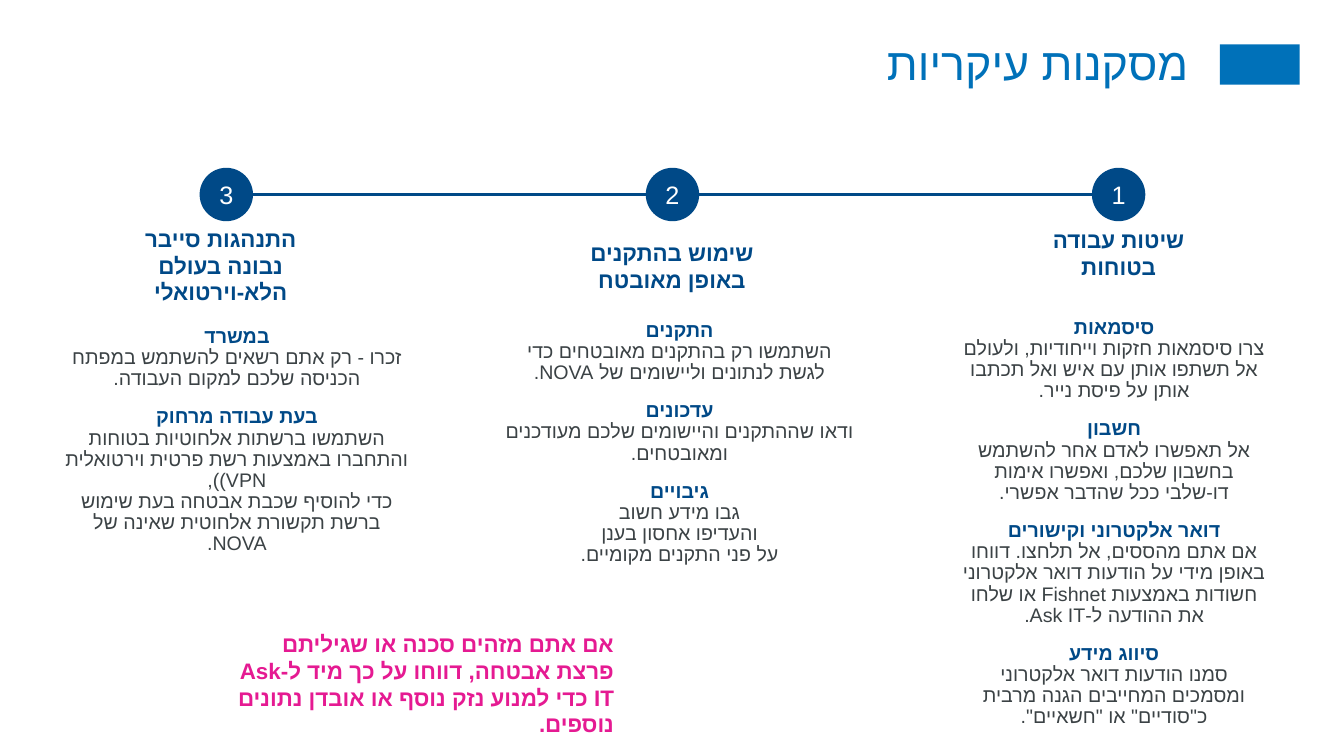
import pptx
import pptx.dml.color
import pptx.enum.shapes
import pptx.enum.text
import pptx.oxml.ns
import pptx.util
from lxml import etree

Inches, Pt = pptx.util.Inches, pptx.util.Pt
qn = pptx.oxml.ns.qn
Kind = pptx.enum.shapes.MSO_SHAPE
Align = pptx.enum.text.PP_ALIGN
Anchor = pptx.enum.text.MSO_ANCHOR

NAVY, BLUE, PINK, GREY, WHITE = "004987", "0071B9", "E51A92", "3B4245", "FFFFFF"
FONT = "Arial"

TITLE = "מסקנות עיקריות"
NOTE = ("אם אתם מזהים סכנה או שגיליתם פרצת אבטחה, דווחו על כך מיד ל-Ask IT "
        "כדי למנוע נזק נוסף או אובדן נתונים נוספים.")

# Steps from left to right: number, heading, heading box, tips, tips box
STEPS = [
    ("3", "התנהגות סייבר נבונה בעולם הלא-וירטואלי", (1.11, 2.31, 2.16, 0.64), [
        ("במשרד", "זכרו - רק אתם רשאים להשתמש במפתח הכניסה שלכם למקום העבודה."),
        ("בעת עבודה מרחוק",
         "השתמשו ברשתות אלחוטיות בטוחות והתחברו באמצעות רשת פרטית וירטואלית VPN)),\n"
         "כדי להוסיף שכבת אבטחה בעת שימוש ברשת תקשורת אלחוטית שאינה של NOVA."),
    ], (0.52, 3.19, 3.66, 2.35)),
    ("2", "שימוש בהתקנים באופן מאובטח", (5.53, 2.32, 2.27, 0.64), [
        ("התקנים", "השתמשו רק בהתקנים מאובטחים כדי לגשת לנתונים וליישומים של NOVA."),
        ("עדכונים", "ודאו שההתקנים והיישומים שלכם מעודכנים ומאובטחים."),
        ("גיבויים", "גבו מידע חשוב\nוהעדיפו אחסון בענן\nעל פני התקנים מקומיים."),
    ], (4.91, 3.13, 3.66, 2.56)),
    ("1", "שיטות עבודה בטוחות", (10.02, 2.19, 2.15, 0.64), [
        ("סיסמאות", "צרו סיסמאות חזקות וייחודיות, ולעולם אל תשתפו אותן עם איש "
                    "ואל תכתבו אותן על פיסת נייר."),
        ("חשבון", "אל תאפשרו לאדם אחר להשתמש בחשבון שלכם, ואפשרו אימות דו-שלבי "
                  "ככל שהדבר אפשרי."),
        ("דואר אלקטרוני וקישורים",
         "אם אתם מהססים, אל תלחצו. דווחו באופן מידי על הודעות דואר אלקטרוני "
         "חשודות באמצעות Fishnet או שלחו את ההודעה ל-Ask IT."),
        ("סיווג מידע", "סמנו הודעות דואר אלקטרוני ומסמכים המחייבים הגנה מרבית "
                       "כ\"סודיים\" או \"חשאיים\"."),
    ], (9.44, 3.1, 3.22, 4.21)),
]
DOT, LEFT, STEP, MID = 0.53, 1.98, 4.425, 1.93


def rgb(code):
    return pptx.dml.color.RGBColor.from_string(code)


def box(area):
    return [Inches(v) for v in area]


def write(shape, paras, size, looks, align=Align.CENTER, anchor=Anchor.TOP,
          inset=(0.1, 0.05), wrap=True, lead=None, after=0):
    """Fill a shape with right-to-left paragraphs; looks gives (colour, bold) per part."""
    frame = shape.text_frame
    frame.auto_size = pptx.enum.text.MSO_AUTO_SIZE.NONE
    frame.word_wrap, frame.vertical_anchor = wrap, anchor
    frame.margin_left = frame.margin_right = Inches(inset[0])
    frame.margin_top = frame.margin_bottom = Inches(inset[1])
    for i, parts in enumerate(paras):
        para = frame.add_paragraph() if i else frame.paragraphs[0]
        para.alignment, para.space_after = align, Pt(after)
        if lead:
            para.line_spacing = lead
        para._p.get_or_add_pPr().set("rtl", "1")
        lines = [(line, look) for part, look in zip(parts, looks)
                 for line in part.split("\n")]
        for j, (line, (color, bold)) in enumerate(lines):
            if j:
                para.add_line_break()
                etree.SubElement(para._p[-1], qn("a:rPr"), sz=str(size * 100))
            run = para.add_run()
            run.text = line
            font = run.font
            font.size, font.bold, font.name = Pt(size), bold, FONT
            font.color.rgb = rgb(color)
            etree.SubElement(run._r.get_or_add_rPr(), qn("a:cs"), typeface=FONT)


def form(kind, area, fill):
    shape = slide.shapes.add_shape(kind, *box(area))
    shape.shadow.inherit = False
    shape.fill.solid()
    shape.fill.fore_color.rgb = rgb(fill)
    shape.line.fill.background()
    return shape


def link(start, end):
    line = slide.shapes.add_connector(
        pptx.enum.shapes.MSO_CONNECTOR.STRAIGHT, *box((start, MID, end, MID)))
    line.line.color.rgb = rgb(NAVY)
    line.line.width = Pt(2.25)
    etree.SubElement(line._element.spPr, qn("a:effectLst"))


deck = pptx.Presentation()
deck.slide_width, deck.slide_height = Inches(13.33), Inches(7.5)
slide = deck.slides.add_slide(deck.slide_layouts[5])

form(Kind.RECTANGLE, (12.1, 0.44, 0.79, 0.4), BLUE)
title = slide.shapes.title
title.left, title.top, title.width, title.height = box((0.45, 0.44, 11.34, 0.94))
write(title, [[TITLE]], 32, [(BLUE, False)], align=Align.RIGHT, inset=(0, 0), lead=0.85)

for i, (num, head, spot, tips, area) in enumerate(STEPS):
    x = LEFT + i * STEP
    write(form(Kind.RECTANGLE, spot, WHITE), [[head]], 16, [(NAVY, True)],
          anchor=Anchor.MIDDLE)
    if i:
        link(x - STEP + DOT, x)
    write(form(Kind.OVAL, (x, MID - DOT / 2, DOT, DOT), NAVY), [[num]], 18,
          [(WHITE, False)], anchor=Anchor.MIDDLE, inset=(0.13, 0.07), wrap=False)
    write(slide.shapes.add_textbox(*box(area)), tips, 14,
          [(NAVY, True), (GREY, False)], lead=0.9, after=12)

write(slide.shapes.add_textbox(*box((2.15, 6.19, 4, 1.2))), [[NOTE]], 16,
      [(PINK, True)], align=Align.RIGHT, inset=(0.06, 0.06))

deck.save("out.pptx")
